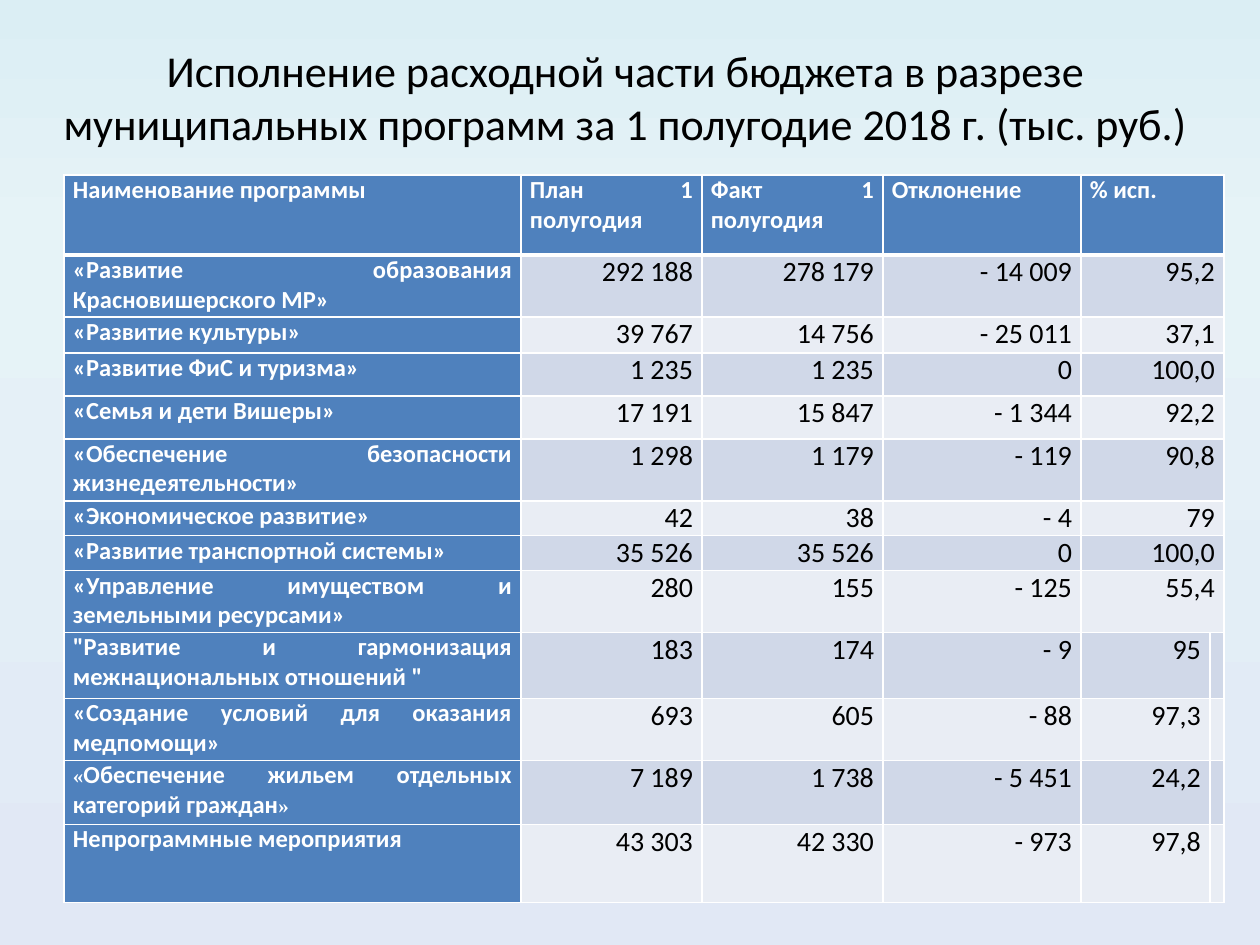
import copy

import pptx
import pptx.dml.color
import pptx.enum.text
import pptx.oxml.ns
import pptx.util
from lxml import etree

RGBColor = pptx.dml.color.RGBColor
WHITE = RGBColor(0xFF, 0xFF, 0xFF)
BLACK = RGBColor(0x00, 0x00, 0x00)
BLUE = RGBColor(0x4F, 0x81, 0xBD)
BAND_DARK = RGBColor(0xD0, 0xD8, 0xE8)
BAND_LIGHT = RGBColor(0xE9, 0xED, 0xF4)
BACKGROUND_STOPS = [
    (0, RGBColor(0xDB, 0xEE, 0xF4)),
    (0.25, RGBColor(0xE6, 0xF3, 0xF7)),
    (1, RGBColor(0xE1, 0xE8, 0xF5)),
]
PX = 914400 / 126
ALIGN = pptx.enum.text.PP_ALIGN
qn = pptx.oxml.ns.qn


def px(length):
    return pptx.util.Emu(round(length * PX))


def add_text(paragraph, text, size=14, color=WHITE, bold=True, font="Calibri", align=ALIGN.JUSTIFY):
    paragraph.alignment = align
    run = paragraph.add_run()
    run.text = text
    run.font.name = font
    run.font.size = pptx.util.Pt(size)
    run.font.bold = bold
    run.font.color.rgb = color


presentation = pptx.Presentation()
presentation.slide_width = px(1260)
presentation.slide_height = px(945)
slide = presentation.slides.add_slide(presentation.slide_layouts[5])

background = slide.background.fill
background.gradient()
background.gradient_angle = 270
first_stop = slide.background._cSld.find(".//" + qn("a:gs"))
first_stop.addnext(copy.deepcopy(first_stop))
for stop, (position, color) in zip(background.gradient_stops, BACKGROUND_STOPS):
    stop.position = position
    stop.color.rgb = color

title = slide.shapes.title
title.left, title.top, title.width, title.height = px(35), px(38), px(1181), px(117)
title.text_frame.word_wrap = True
title.text_frame.auto_size = pptx.enum.text.MSO_AUTO_SIZE.NONE
title.text_frame.vertical_anchor = pptx.enum.text.MSO_ANCHOR.MIDDLE
add_text(
    title.text_frame.paragraphs[0],
    "Исполнение расходной части бюджета в разрезе муниципальных программ за 1 полугодие 2018 г. (тыс. руб.)",
    size=25.2, color=BLACK, bold=False, align=ALIGN.CENTER,
)

budget_rows = [
    ("Наименование программы", "План 1 полугодия", "Факт 1 полугодия", "Отклонение", "% исп."),
    ("«Развитие образования Красновишерского МР»", "292 188", "278 179", "- 14 009", "95,2"),
    ("«Развитие культуры»", "39 767", "14 756", "- 25 011", "37,1"),
    ("«Развитие ФиС и туризма»", "1 235", "1 235", "0", "100,0"),
    ("«Семья и дети Вишеры»", "17 191", "15 847", "- 1 344", "92,2"),
    ("«Обеспечение безопасности жизнедеятельности»", "1 298", "1 179", "- 119", "90,8"),
    ("«Экономическое развитие»", "42", "38", "- 4", "79"),
    ("«Развитие транспортной системы»", "35 526", "35 526", "0", "100,0"),
    ("«Управление имуществом и земельными ресурсами»", "280", "155", "- 125", "55,4"),
    ("\"Развитие и гармонизация межнациональных отношений \"", "183", "174", "- 9", "95"),
    ("«Создание условий для оказания медпомощи»", "693", "605", "- 88", "97,3"),
    ("«Обеспечение жильем отдельных категорий граждан»", "7 189", "1 738", "- 5 451", "24,2"),
    ("Непрограммные мероприятия", "43 303", "42 330", "- 973", "97,8"),
]
column_widths = [457, 181, 181, 198, 129, 14]
row_heights = [80, 62, 36, 43, 43, 62, 35, 35, 62, 66, 62, 64, 78]
last_merged_row = 8
housing_row = 11

table = slide.shapes.add_table(
    len(row_heights), len(column_widths), px(64), px(175), px(sum(column_widths)), px(sum(row_heights))
).table
table.horz_banding = False
for column, width in zip(table.columns, column_widths):
    column.width = px(width)
for row, height in zip(table.rows, row_heights):
    row.height = px(height)

for row_index in range(len(row_heights)):
    band = BAND_DARK if row_index % 2 else BAND_LIGHT
    for column_index in range(len(column_widths)):
        cell = table.cell(row_index, column_index)
        cell.margin_left = cell.margin_right = px(9 if column_index < 5 else 0)
        cell.margin_top = cell.margin_bottom = 0
        properties = cell._tc.get_or_add_tcPr()
        for side in "LRTB":
            thick = (row_index, side) in [(0, "B"), (1, "T")]
            line = etree.SubElement(properties, qn("a:ln" + side), w=str(pptx.util.Pt(3 if thick else 1)))
            line_fill = etree.SubElement(line, qn("a:solidFill"))
            etree.SubElement(line_fill, qn("a:srgbClr"), val=str(WHITE))
        cell.fill.solid()
        cell.fill.fore_color.rgb = BLUE if row_index == 0 or column_index == 0 else band
    if row_index <= last_merged_row:
        table.cell(row_index, 4).merge(table.cell(row_index, 5))

    for column_index, text in enumerate(budget_rows[row_index]):
        paragraph = table.cell(row_index, column_index).text_frame.paragraphs[0]
        if row_index == housing_row and column_index == 0:
            add_text(paragraph, text[0], size=12, font="Times New Roman")
            add_text(paragraph, text[1:-1])
            add_text(paragraph, text[-1], size=12, font="Times New Roman")
        elif row_index == 0 or column_index == 0:
            add_text(paragraph, text)
        else:
            add_text(paragraph, text, size=16, color=BLACK, bold=False, align=ALIGN.RIGHT)

presentation.save("out.pptx")
